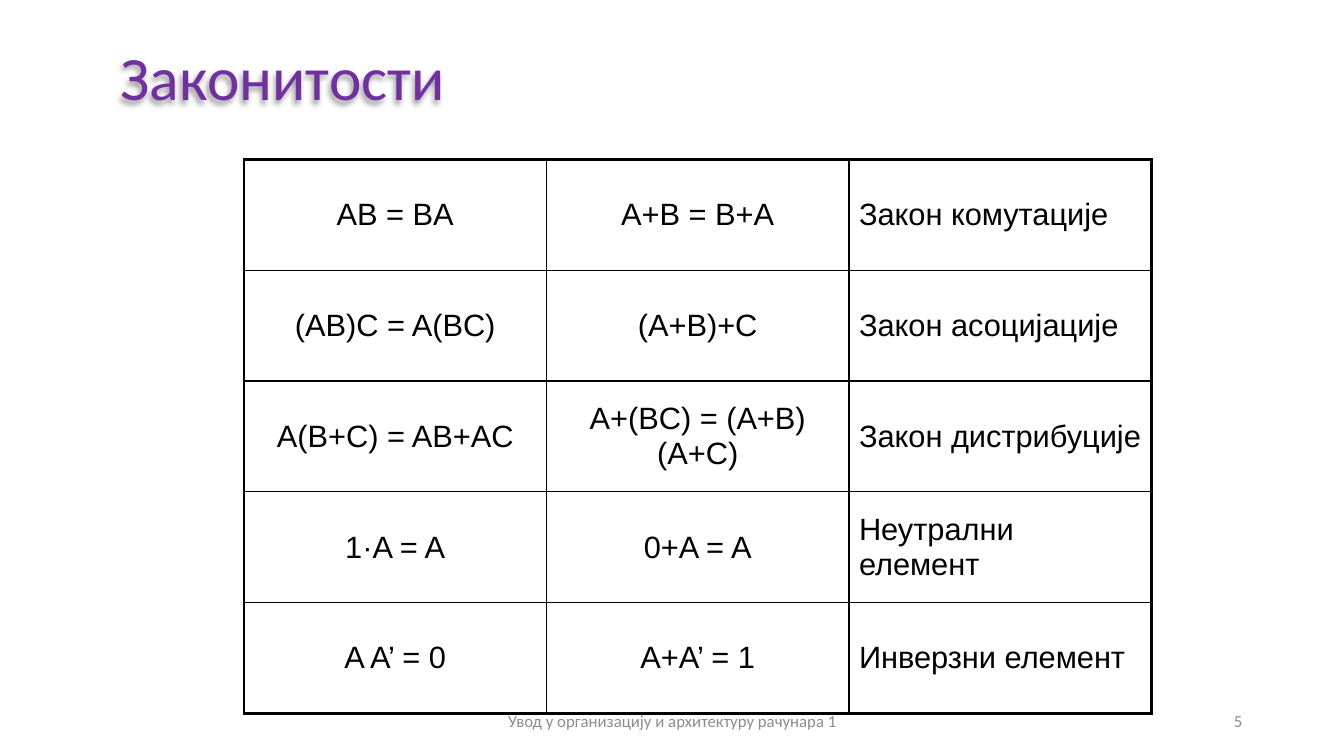
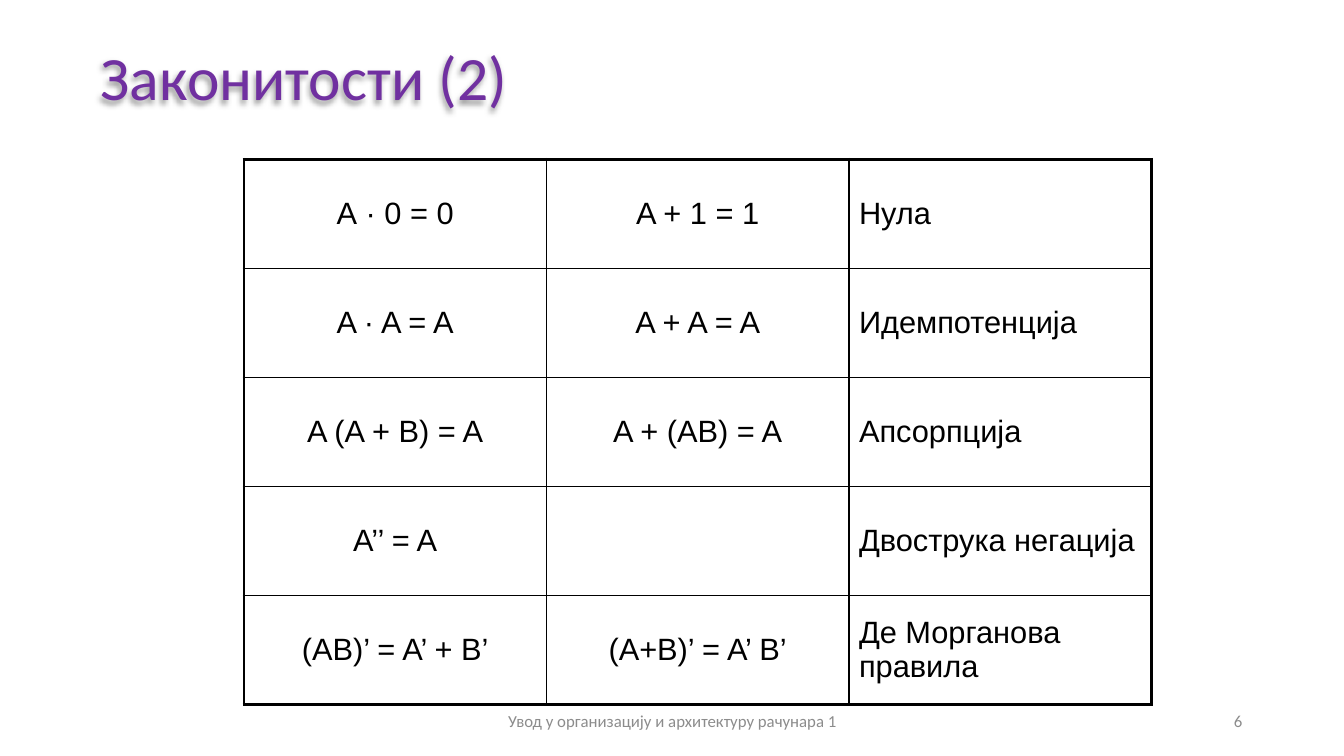
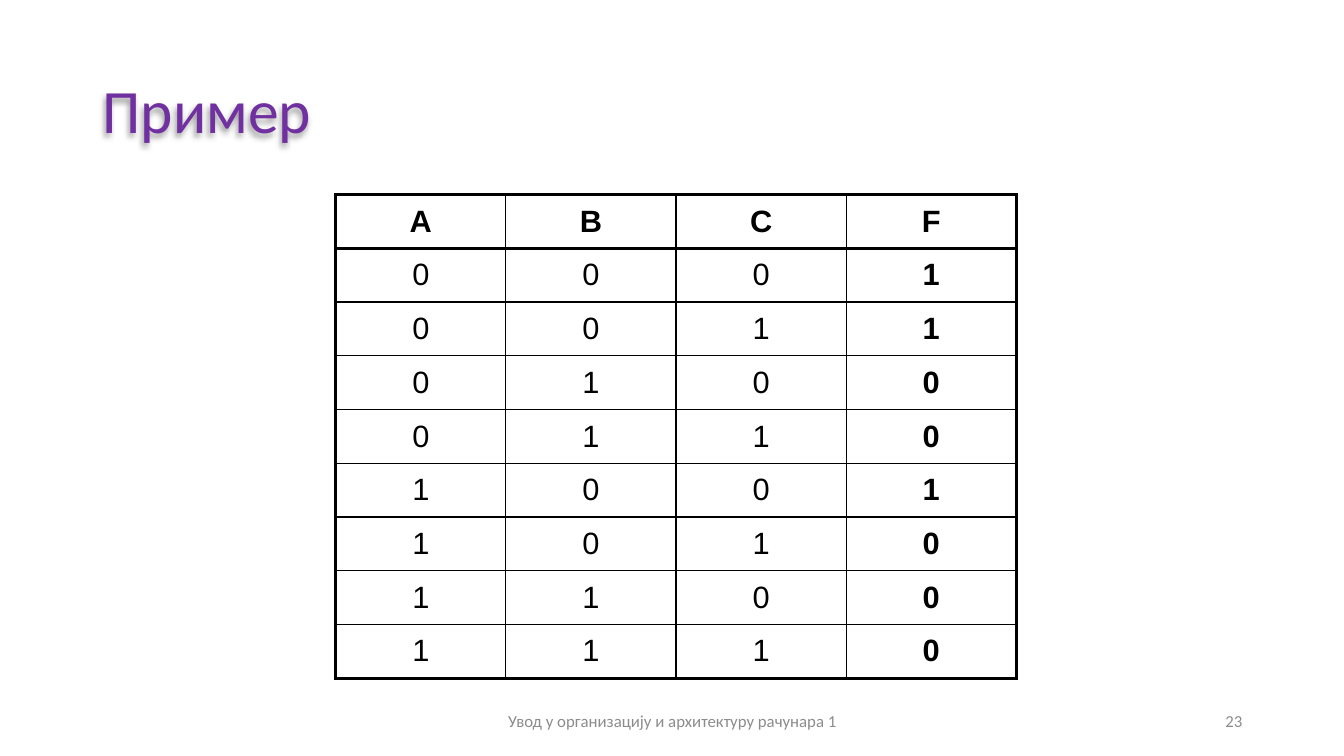
from itertools import product

from lxml.etree import SubElement
from pptx import Presentation
from pptx.dml.color import RGBColor
from pptx.enum.text import MSO_ANCHOR, PP_ALIGN
from pptx.oxml import parse_xml
from pptx.oxml.ns import nsdecls, qn
from pptx.util import Inches, Pt

FOOTER = "Увод у организацију и архитектуру рачунара 1"

LAWS = [
    ("AB = BA", "A+B = B+A", "Закон комутације"),
    ("(AB)C = A(BC)", "(A+B)+C", "Закон асоцијације"),
    ("A(B+C) = AB+AC", "A+(BC) = (A+B)(A+C)", "Закон дистрибуције"),
    ("1·A = A", "0+A = A", "Неутрални елемент"),
    ("A A’ = 0", "A+A’ = 1", "Инверзни елемент"),
]
MORE_LAWS = [
    ("А · 0 = 0", "A + 1 = 1", "Нула"),
    ("A · A = A", "A + A = A", "Идемпотенција"),
    ("A (A + B) = A", "A + (AB) = A", "Апсорпција"),
    ("A’’ = A", "", "Двострука негација"),
    ("(AB)’ = A’ + B’", "(A+B)’ = A’ B’", "Де Морганова правила"),
]
RESULTS = "11001000"
TRUTH_TABLE = [("А", "B", "C", "F")] + [
    (*inputs, result) for inputs, result in zip(product("01", repeat=3), RESULTS)
]


def color(value):
    return RGBColor.from_string(value)


def write(frame, text, size=22, font="Arial", fill="000000", bold=False,
          align=PP_ALIGN.LEFT, spacing=None):
    frame.word_wrap = True
    paragraph = frame.paragraphs[0]
    paragraph.alignment = align
    if spacing:
        paragraph.line_spacing = spacing
    if text:
        run = paragraph.add_run()
        run.text = text
        run.font.size = Pt(size)
        run.font.name = font
        run.font.bold = bold
        run.font.color.rgb = color(fill)


def set_borders(cell, widths):
    properties = cell._tc.get_or_add_tcPr()
    for index, (side, width) in enumerate(zip("LRTB", widths)):
        line = parse_xml(f'<a:ln{side} {nsdecls("a")} w="{Pt(width)}"/>')
        fill = SubElement(line, qn("a:solidFill"))
        SubElement(fill, qn("a:srgbClr"), val="000000")
        properties.insert(index, line)


class Deck:
    heading = dict(size=44, font="Calibri", fill="7030A0", spacing=0.9)
    small = dict(size=12, font="Calibri", fill="8C8C8C")
    thick, thin = 2.25, 1

    def __init__(self):
        self.presentation = Presentation()
        self.presentation.slide_width = Inches(13.33)
        self.presentation.slide_height = Inches(7.5)
        self.slide = None

    def add_slide(self, number):
        self.slide = self.presentation.slides.add_slide(
            self.presentation.slide_layouts[6])
        self.text(FOOTER, 4.42, 6.95, 4.5, 0.4, align=PP_ALIGN.CENTER, **self.small)
        self.text(str(number), 9.42, 6.95, 3, 0.4, align=PP_ALIGN.RIGHT, **self.small)

    def text(self, text, left, top, width, height, **style):
        shape = self.slide.shapes.add_textbox(
            Inches(left), Inches(top), Inches(width), Inches(height))
        shape.text_frame.vertical_anchor = MSO_ANCHOR.MIDDLE
        write(shape.text_frame, text, **style)
        return shape

    def title(self, text, left, top, width, height):
        shape = self.text(text, left, top, width, height, **self.heading)
        shape._element.spPr.append(parse_xml(
            f'<a:effectLst {nsdecls("a")}>'
            f'<a:outerShdw blurRad="{Pt(4)}" dist="{Pt(3)}" dir="8100000" '
            'algn="tr" rotWithShape="0"><a:srgbClr val="000000">'
            '<a:alpha val="40000"/></a:srgbClr></a:outerShdw></a:effectLst>'))

    def table(self, rows, left, top, width, height, left_columns=(),
              bold_columns=(), header=False):
        row_count, column_count = len(rows), len(rows[0])
        table = self.slide.shapes.add_table(
            row_count, column_count, Inches(left), Inches(top),
            Inches(width), Inches(height)).table
        table.first_row = table.horz_banding = False
        thick_rules = {0, row_count} | ({1} if header else set())
        for column in table.columns:
            column.width = Inches(width / column_count)
        for y, values in enumerate(rows):
            table.rows[y].height = Inches(height / row_count)
            for x, value in enumerate(values):
                cell = table.cell(y, x)
                cell.fill.background()
                cell.vertical_anchor = MSO_ANCHOR.MIDDLE
                write(cell.text_frame, value,
                      bold=x in bold_columns or (header and y == 0),
                      align=PP_ALIGN.LEFT if x in left_columns else PP_ALIGN.CENTER)
                outer = (x == 0, x == column_count - 1,
                         y in thick_rules, y + 1 in thick_rules)
                set_borders(cell, [self.thick if edge else self.thin for edge in outer])


def main():
    deck = Deck()

    deck.add_slide(5)
    deck.title("Законитости", 1.1, 0.2, 11.22, 1.2)
    deck.table(LAWS, 2.42, 1.58, 9, 5.5, left_columns={2})

    deck.add_slide(6)
    deck.title("Законитости (2)", 0.9, 0.2, 11.22, 1.2)
    deck.table(MORE_LAWS, 2.42, 1.58, 9, 5.41, left_columns={2})

    deck.add_slide(23)
    deck.title("Пример", 0.92, 0.4, 11.5, 1.45)
    deck.table(TRUTH_TABLE, 3.33, 1.93, 6.75, 4.8, bold_columns={3}, header=True)

    deck.presentation.save("out.pptx")


if __name__ == "__main__":
    main()
